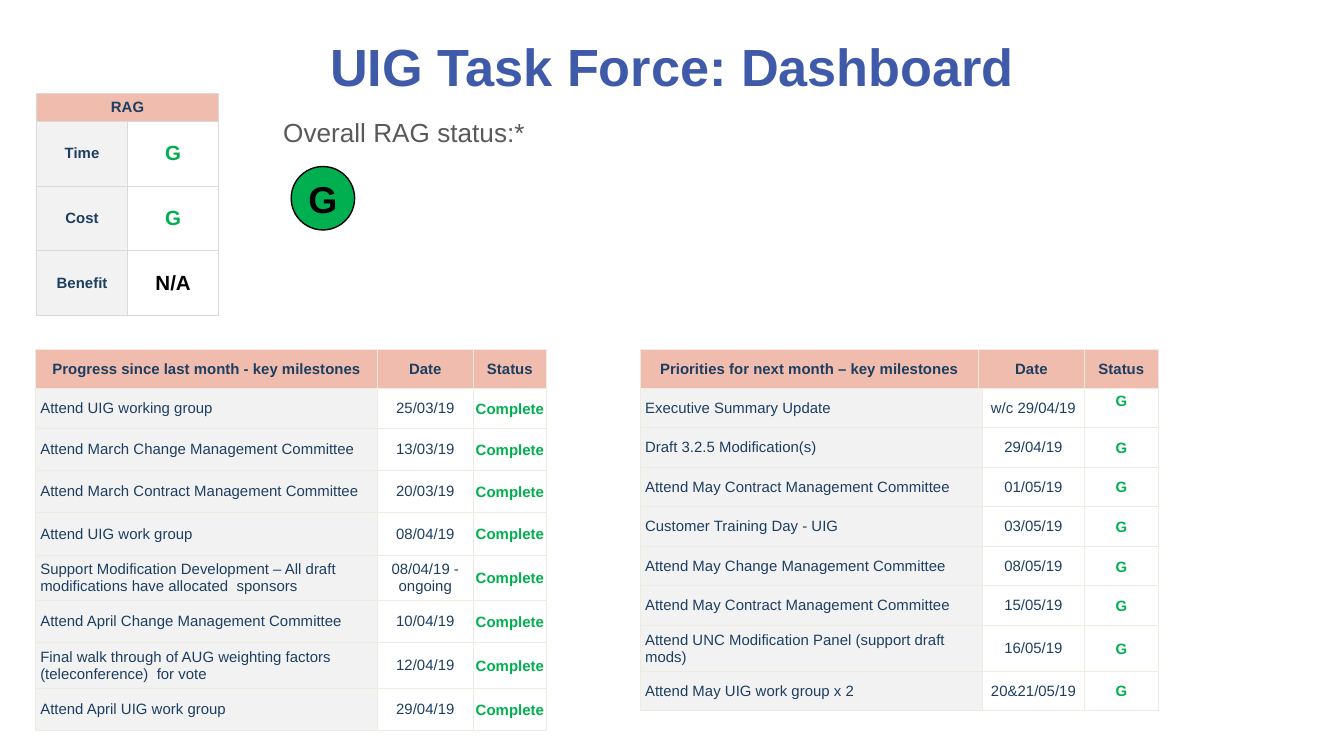
from lxml.etree import SubElement
from pptx import Presentation
from pptx.dml.color import RGBColor
from pptx.enum.shapes import MSO_SHAPE as Shape
from pptx.enum.text import MSO_ANCHOR as Anchor, PP_ALIGN as Align
from pptx.oxml.ns import qn
from pptx.util import Pt

NAVY, GREEN, BLACK, WHITE = "1D3E61", "00B050", "000000", "FFFFFF"
PEACH, PALE, SILVER, IVORY = "EFBCAD", "F2F2F2", "D9D9D9", "EEECE1"
TIGHT, ROOMY = (0.72, 0.72, 0.72, 0), (2.6, 2.6, 2.6, 2.6)

HEADER = dict(fill=PEACH, bold=True, insets=TIGHT)
TASK = dict(fill=PALE, align=Align.LEFT)
DATE = dict()
STATUS = dict(color=GREEN, bold=True, insets=TIGHT)
RAISED_STATUS = {**STATUS, "insets": (0.72, 0.72, 0.72, 8)}
RAG_HEADER = dict(fill=PEACH, bold=True)
RAG_LABEL = dict(fill=PALE, bold=True)
RAG_VALUE = dict(size=11, color=GREEN, bold=True)
RAG_NONE = {**RAG_VALUE, "color": BLACK}

PROGRESS = [
    ("Attend UIG working group", "25/03/19"),
    ("Attend March Change Management Committee", "13/03/19"),
    ("Attend March Contract Management Committee", "20/03/19"),
    ("Attend UIG work group", "08/04/19"),
    ("Support Modification Development – All draft modifications have allocated  sponsors",
     "08/04/19 - ongoing"),
    ("Attend April Change Management Committee", "10/04/19"),
    ("Final walk through of AUG weighting factors (teleconference)  for vote", "12/04/19"),
    ("Attend April UIG work group", "29/04/19"),
]
PRIORITIES = [
    ("Executive Summary Update", "w/c 29/04/19"),
    ("Draft 3.2.5 Modification(s)", "29/04/19"),
    ("Attend May Contract Management Committee", "01/05/19"),
    ("Customer Training Day - UIG", "03/05/19"),
    ("Attend May Change Management Committee", "08/05/19"),
    ("Attend May Contract Management Committee", "15/05/19"),
    ("Attend UNC Modification Panel (support draft mods)", "16/05/19"),
    ("Attend May UIG work group x 2", "20&21/05/19"),
]


def rgb(code):
    return RGBColor.from_string(code)


def write(frame, text, size=8, color=NAVY, bold=False, align=Align.CENTER):
    para = frame.paragraphs[0]
    para.alignment = align
    span = para.add_run()
    span.text = text
    span.font.name = "Arial"
    span.font.size = Pt(size)
    span.font.bold = bold
    span.font.color.rgb = rgb(color)


def set_margins(target, insets):
    left, top, right, bottom = map(Pt, insets)
    target.margin_left, target.margin_top = left, top
    target.margin_right, target.margin_bottom = right, bottom


def header_row(title):
    return [(text, HEADER) for text in (title, "Date", "Status")]


def milestone_rows(milestones, status):
    return [[(task, TASK), (date, DATE), (status, STATUS)] for task, date in milestones]


class Dashboard:
    """Draws styled text, badges and tables on one page."""

    def __init__(self, page):
        self.page = page

    def text(self, text, left, top, width, height, anchor=Anchor.TOP, **style):
        box = self.page.shapes.add_textbox(Pt(left), Pt(top), Pt(width), Pt(height))
        box.text_frame.word_wrap = True
        box.text_frame.vertical_anchor = anchor
        write(box.text_frame, text, **style)

    def badge(self, text, left, top, diameter, fill, **style):
        circle = self.page.shapes.add_shape(
            Shape.OVAL, Pt(left), Pt(top), Pt(diameter), Pt(diameter))
        circle.shadow.inherit = False
        circle.fill.solid()
        circle.fill.fore_color.rgb = rgb(fill)
        circle.line.color.rgb = rgb(BLACK)
        circle.line.width = Pt(0.75)
        frame = circle.text_frame
        frame.word_wrap = False
        frame.vertical_anchor = Anchor.MIDDLE
        set_margins(frame, (18, 0, 18, 0))
        write(frame, text, **style)

    def table(self, left, top, widths, heights, rows, border):
        holder = self.page.shapes.add_table(
            len(rows), len(widths), Pt(left), Pt(top), Pt(sum(widths)), Pt(sum(heights)))
        table = holder.table
        table.first_row = table.horz_banding = False
        for column, width in zip(table.columns, widths):
            column.width = Pt(width)
        for index, (height, row) in enumerate(zip(heights, rows)):
            table.rows[index].height = Pt(height)
            for number in range(len(widths)):
                self.border(table.cell(index, number), border)
            for number, (text, look) in enumerate(row):
                self.cell(table.cell(index, number), text, **look)
            if len(row) < len(widths):
                table.cell(index, len(row) - 1).merge(table.cell(index, len(widths) - 1))

    def border(self, cell, color):
        properties = cell._tc.get_or_add_tcPr()
        for side in ("a:lnL", "a:lnR", "a:lnT", "a:lnB"):
            line = SubElement(properties, qn(side), w=str(Pt(0.5)))
            fill = SubElement(line, qn("a:solidFill"))
            SubElement(fill, qn("a:srgbClr"), val=color)

    def cell(self, cell, text, fill=WHITE, insets=ROOMY, **style):
        cell.fill.solid()
        cell.fill.fore_color.rgb = rgb(fill)
        cell.vertical_anchor = Anchor.MIDDLE
        set_margins(cell, insets)
        write(cell.text_frame, text, **style)


def main():
    deck = Presentation()
    deck.slide_width, deck.slide_height = Pt(720), Pt(405)
    board = Dashboard(deck.slides.add_slide(deck.slide_layouts[6]))

    board.text("UIG Task Force: Dashboard", 36, 10.2, 648, 50.4, anchor=Anchor.MIDDLE,
               size=28, color="3E5AA8", bold=True)
    board.badge("G", 156, 89.2, 34, GREEN, size=20, color=BLACK, bold=True)
    board.text("Overall RAG status:*", 144.6, 59, 181.4, 24.2,
               size=14, color="595959", align=Align.LEFT)

    rag_rows = [
        [("RAG", RAG_HEADER)],
        [("Time", RAG_LABEL), ("G", RAG_VALUE)],
        [("Cost", RAG_LABEL), ("G", RAG_VALUE)],
        [("Benefit", RAG_LABEL), ("N/A", RAG_NONE)],
    ]
    board.table(19.6, 50.2, [48.8] * 2, [14.8] + [34.7] * 3, rag_rows, SILVER)

    progress_rows = [header_row("Progress since last month - key milestones"),
                     *milestone_rows(PROGRESS, "Complete")]
    board.table(19, 187.2, [183.4, 51, 39.6], [20.8, 21.4] + [22.7] * 7,
                progress_rows, IVORY)

    board.table(343, 187.2, [181.2, 56.8, 39.6], [20.8],
                [header_row("Priorities for next month – key milestones")], IVORY)
    priority_rows = milestone_rows(PRIORITIES, "G")
    priority_rows[0][-1] = ("G", RAISED_STATUS)
    board.table(343, 208, [183.4, 54.6, 39.6], [21.2] * 6 + [24.6, 21.2],
                priority_rows, IVORY)

    deck.save("out.pptx")


if __name__ == "__main__":
    main()
